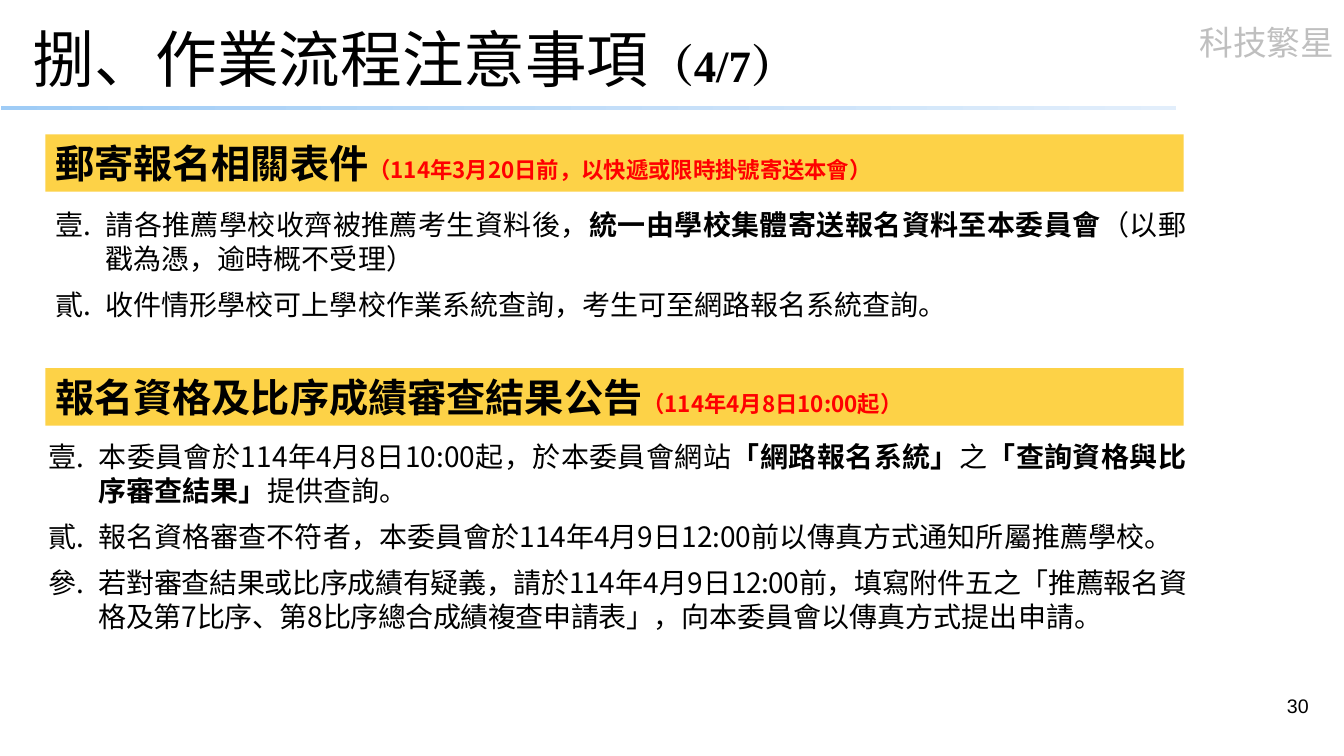
from dataclasses import dataclass

from lxml.etree import SubElement
from pptx import Presentation
from pptx.dml.color import RGBColor
from pptx.enum.shapes import MSO_SHAPE as SHAPE
from pptx.enum.text import MSO_ANCHOR as ANCHOR, PP_ALIGN as ALIGN
from pptx.oxml.ns import qn
from pptx.util import Pt


@dataclass(frozen=True)
class Theme:
    """Colours, fonts and type sizes of the slide."""
    ink: str = "000000"
    alert: str = "FF0000"
    muted: str = "BFBFBF"
    band: str = "FDD247"
    rule_from: str = "9FCCF6"
    rule_to: str = "E2EEFB"
    cjk: str = "Noto Sans CJK SC"
    display: str = "Noto Sans CJK JP"
    serif: str = "Times New Roman"
    sans: str = "Arial"
    title: int = 44
    counter: int = 32
    heading: int = 28
    tag: int = 24
    body: int = 20
    deadline: int = 16
    number: int = 14
    leading: int = 24


T = Theme()

MAILING = [
    [("請各推薦學校收齊被推薦考生資料後，", False),
     ("統一由學校集體寄送報名資料至本委員會", True),
     ("（以郵戳為憑，逾時概不受理）", False)],
    [("收件情形學校可上學校作業系統查詢，考生可至網路報名系統查詢。", False)],
]
RESULTS = [
    [("本委員會於114年4月8日10:00起，於本委員會網站", False),
     ("「網路報名系統」", True),
     ("之", False),
     ("「查詢資格與比序審查結果」", True),
     ("提供查詢。", False)],
    [("報名資格審查不符者，本委員會於114年4月9日12:00前以傳真方式通知所屬推薦學校。", False)],
    [("若對審查結果或比序成績有疑義，請於114年4月9日12:00前，填寫附件五之"
      "「推薦報名資格及第7比序、第8比序總合成績複查申請表」，", False, -0.4),
     ("向本委員會以傳真方式提出申請。", False)],
]


def add_run(p, text, size, font, color=T.ink, bold=False, spacing=0):
    """Append one formatted run to a paragraph."""
    r = p.add_run()
    r.text = text
    r.font.size, r.font.bold, r.font.name = Pt(size), bold, font
    r.font.color.rgb = RGBColor.from_string(color)
    rpr = r.font._element
    SubElement(rpr, qn("a:ea")).set("typeface", font)
    if spacing:
        rpr.set("spc", str(round(spacing * 100)))


def add_box(s, left, top, width, height):
    """Add a wrapping text box and return its text frame."""
    tf = s.shapes.add_textbox(Pt(left), Pt(top), Pt(width), Pt(height)).text_frame
    tf.word_wrap = True
    return tf


def add_label(s, box, text, size, font, color=T.ink):
    """Add a right-aligned single-line label."""
    p = add_box(s, *box).paragraphs[0]
    p.alignment = ALIGN.RIGHT
    add_run(p, text, size, font, color)


def add_rect(s, left, top, width, height):
    """Add a rectangle without line or shadow."""
    sp = s.shapes.add_shape(SHAPE.RECTANGLE, Pt(left), Pt(top), Pt(width), Pt(height))
    sp.shadow.inherit = False
    sp.line.fill.background()
    return sp


def add_rule(s):
    """Add the fading rule below the title."""
    fill = add_rect(s, 0.7, 75.6, 839.5, 2.9).fill
    fill.gradient()
    fill.gradient_angle = 0
    for stop, color in zip(fill.gradient_stops, (T.rule_from, T.rule_to)):
        stop.color.rgb = RGBColor.from_string(color)


def add_title(s, text, counter):
    """Place and fill the title placeholder."""
    sp = s.shapes.title
    sp.left, sp.top, sp.width, sp.height = Pt(16), Pt(16), Pt(813), Pt(50)
    tf = sp.text_frame
    tf.vertical_anchor = ANCHOR.MIDDLE
    p = tf.paragraphs[0]
    p.alignment = ALIGN.LEFT
    add_run(p, text, T.title, T.display)
    add_run(p, counter, T.counter, T.serif, bold=True)


def add_heading(s, top, text, deadline):
    """Add a yellow section band with its deadline in red."""
    sp = add_rect(s, 32.4, top, 813, 41)
    sp.fill.solid()
    sp.fill.fore_color.rgb = RGBColor.from_string(T.band)
    tf = sp.text_frame
    tf.word_wrap = True
    tf.vertical_anchor = ANCHOR.MIDDLE
    tf.margin_top = tf.margin_bottom = 0
    p = tf.paragraphs[0]
    p.alignment = ALIGN.LEFT
    add_run(p, text, T.heading, T.cjk, bold=True)
    add_run(p, deadline, T.deadline, T.cjk, T.alert, bold=True)


def add_numbered(s, box, items):
    """Add a justified list with Chinese formal numerals."""
    tf = add_box(s, *box)
    for i, runs in enumerate(items):
        p = tf.add_paragraph() if i else tf.paragraphs[0]
        p.alignment = ALIGN.JUSTIFY
        p.line_spacing = Pt(T.leading)
        p.space_before, p.space_after = Pt(3 if i else 0), Pt(6)
        ppr = p._p.get_or_add_pPr()
        ppr.set("marL", str(Pt(36)))
        ppr.set("indent", str(-Pt(36)))
        SubElement(ppr, qn("a:buFont")).set("typeface", T.cjk)
        SubElement(ppr, qn("a:buAutoNum")).set("type", "ea1ChtPeriod")
        for text, bold, *spacing in runs:
            add_run(p, text, T.body, T.cjk, T.ink, bold, *spacing)


def main():
    """Build the slide and save it."""
    prs = Presentation()
    prs.slide_width, prs.slide_height = Pt(960), Pt(540)
    s = prs.slides.add_slide(prs.slide_layouts[5])
    add_rule(s)
    add_label(s, (790, 12, 170, 36), "科技繁星", T.tag, T.display, T.muted)
    add_title(s, "捌、作業流程注意事項", "（4/7）")
    add_label(s, (718, 492, 224, 37), "30", T.number, T.sans)
    add_heading(s, 96, "郵寄報名相關表件", "（114年3月20日前，以快遞或限時掛號寄送本會）")
    add_numbered(s, (32.4, 145, 822, 103), MAILING)
    add_heading(s, 263, "報名資格及比序成績審查結果公告", "（114年4月8日10:00起）")
    add_numbered(s, (27.4, 310.5, 827, 187), RESULTS)
    prs.save("out.pptx")


if __name__ == "__main__":
    main()
